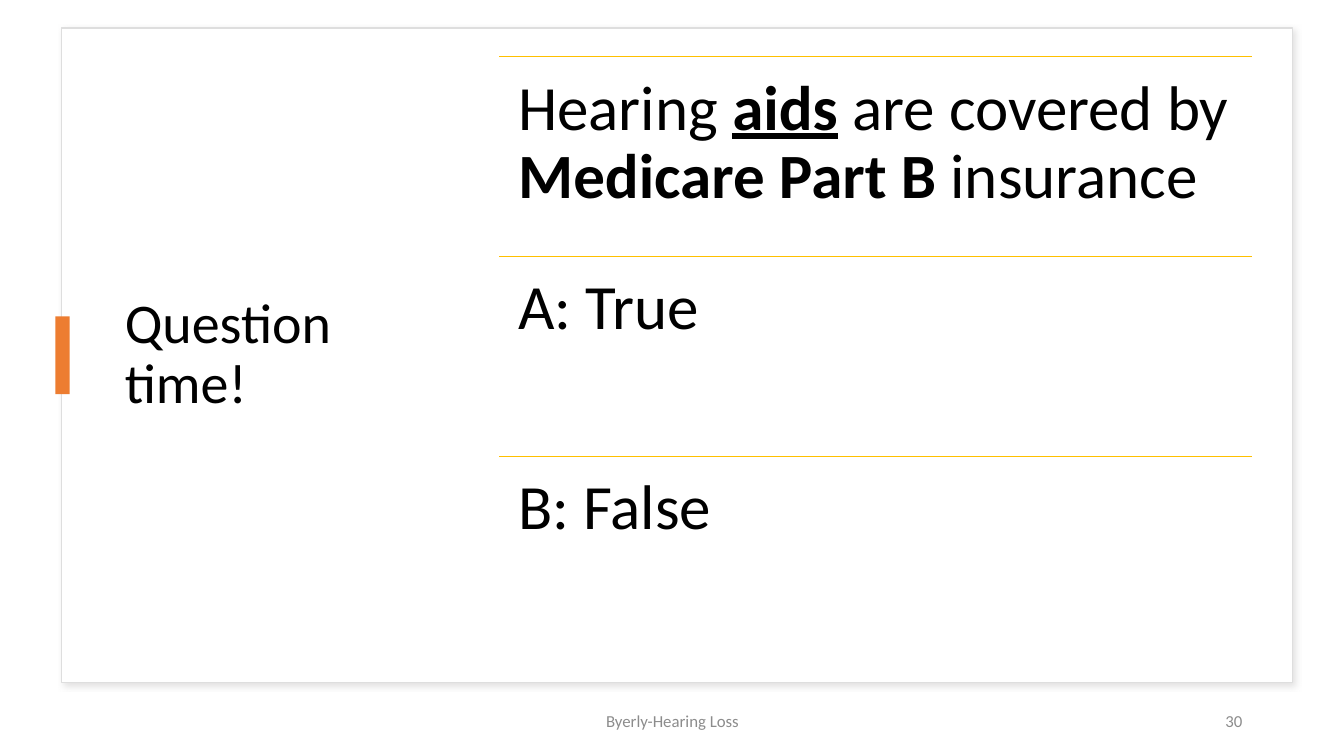
"""Build a true-or-false question slide with a framed title and ruled rows."""
from dataclasses import dataclass
from typing import Any

from lxml.etree import SubElement as add_node
from pptx import Presentation as Deck
from pptx.dml.color import RGBColor as Color
from pptx.enum.shapes import MSO_CONNECTOR as Link, MSO_SHAPE as Form
from pptx.enum.text import MSO_ANCHOR as Anchor, PP_ALIGN as Align
from pptx.oxml.ns import qn
from pptx.util import Inches, Pt


@dataclass(frozen=True)
class Theme:
    """Hold the colours, font and type sizes."""
    font: str = "Calibri"
    ink: str = "000000"
    paper: str = "FFFFFF"
    edge: str = "DEDEDE"
    shade: str = "C5C3C3"
    accent: str = "ED7D31"
    rule: str = "FFC000"
    muted: str = "8C8C8C"
    title: int = 40
    body: int = 45
    small: int = 12


@dataclass(frozen=True)
class Box:
    """Hold a place as percentages of the slide's width and height."""
    left: float
    top: float
    width: float
    height: float


@dataclass(frozen=True)
class Run:
    """Hold a piece of text and its font values."""
    text: str
    style: dict[str, Any]


@dataclass(frozen=True)
class Label:
    """Hold a text box's place, runs and format."""
    box: Box
    runs: list[Run]
    size: int
    color: str
    frame: dict[str, Any]
    para: dict[str, Any]


THEME = Theme()
WIDE, HIGH = Inches(13.33), Inches(7.5)
BOLD = {"bold": True}
PAD = {f"margin_{side}": Inches(0.19) for side in ("left", "top", "right", "bottom")}
MID = {"vertical_anchor": Anchor.MIDDLE}
TIGHT = {"line_spacing": 0.9}

FRAME = Box(4.58, 3.73, 91.6, 86.53)
TAB = Box(4.13, 41.87, 1.05, 10.27)
LIST = Box(37.13, 7.47, 56.04, 79.33)
ROWS = [
    [Run("Hearing ", {}), Run("aids", {"bold": True, "underline": True}),
     Run(" are covered by ", {}), Run("Medicare Part B ", BOLD), Run("insurance", {})],
    [Run("A: True", {})],
    [Run("B: False", {})],
]
LABELS = [
    Label(Box(8.55, 7.33, 24.53, 79.33), [Run("Question time!", {})],
          THEME.title, THEME.ink, MID, TIGHT),
    Label(Box(33.16, 92.67, 33.76, 5.33), [Run("Byerly-Hearing Loss", {})],
          THEME.small, THEME.muted, MID, {"alignment": Align.CENTER}),
    Label(Box(70.67, 92.67, 22.5, 5.33), [Run("30", {})],
          THEME.small, THEME.muted, MID, {"alignment": Align.RIGHT}),
]


def apply(target: Any, values: dict[str, Any]) -> None:
    """Set each named value on the target."""
    for name, value in values.items():
        setattr(target, name, value)


def place(box: Box) -> tuple[int, int, int, int]:
    """Turn percentages into slide lengths."""
    return (round(WIDE * box.left / 100), round(HIGH * box.top / 100),
            round(WIDE * box.width / 100), round(HIGH * box.height / 100))


def draw_block(slide: Any, box: Box, fill: str, edge: str | None = None) -> Any:
    """Draw a flat rectangle with an optional outline."""
    block = slide.shapes.add_shape(Form.RECTANGLE, *place(box))
    block.shadow.inherit = False
    block.fill.solid()
    block.fill.fore_color.rgb = Color.from_string(fill)
    if edge:
        block.line.color.rgb = Color.from_string(edge)
        block.line.width = Pt(1)
    else:
        block.line.fill.background()
    return block


def cast_shade(block: Any) -> None:
    """Give a block a soft shadow to the lower right."""
    effects = block._element.spPr.find(qn("a:effectLst"))
    shade = add_node(effects, qn("a:outerShdw"), blurRad=str(Pt(4)), dist=str(Pt(3)),
                     dir=str(45 * 60000), algn="tl", rotWithShape="0")
    tint = add_node(shade, qn("a:srgbClr"), val=THEME.shade)
    add_node(tint, qn("a:alpha"), val="50000")


def draw_rule(slide: Any, box: Box) -> None:
    """Draw a line along the top of a box."""
    left, top, width, _ = place(box)
    rule = slide.shapes.add_connector(Link.STRAIGHT, left, top, left + width, top)
    rule.line.color.rgb = Color.from_string(THEME.rule)
    rule.line.width = Pt(1)
    add_node(rule._element.spPr, qn("a:effectLst"))


def draw_label(slide: Any, label: Label) -> None:
    """Draw a text box with its styled runs."""
    frame = slide.shapes.add_textbox(*place(label.box)).text_frame
    apply(frame, {"word_wrap": True, **label.frame})
    para = frame.paragraphs[0]
    apply(para, label.para)
    for item in label.runs:
        run = para.add_run()
        run.text = item.text
        apply(run.font, {"name": THEME.font, "size": Pt(label.size), **item.style})
        run.font.color.rgb = Color.from_string(label.color)


def main() -> None:
    """Build and save the slide."""
    deck = Deck()
    apply(deck, {"slide_width": WIDE, "slide_height": HIGH})
    slide = deck.slides.add_slide(deck.slide_layouts[6])
    cast_shade(draw_block(slide, FRAME, THEME.paper, THEME.edge))
    draw_block(slide, TAB, THEME.accent)
    step = LIST.height / len(ROWS)
    for index, runs in enumerate(ROWS):
        box = Box(LIST.left, LIST.top + index * step, LIST.width, step)
        draw_rule(slide, box)
        draw_label(slide, Label(box, runs, THEME.body, THEME.ink, PAD, TIGHT))
    for label in LABELS:
        draw_label(slide, label)
    deck.save("out.pptx")


if __name__ == "__main__":
    main()
